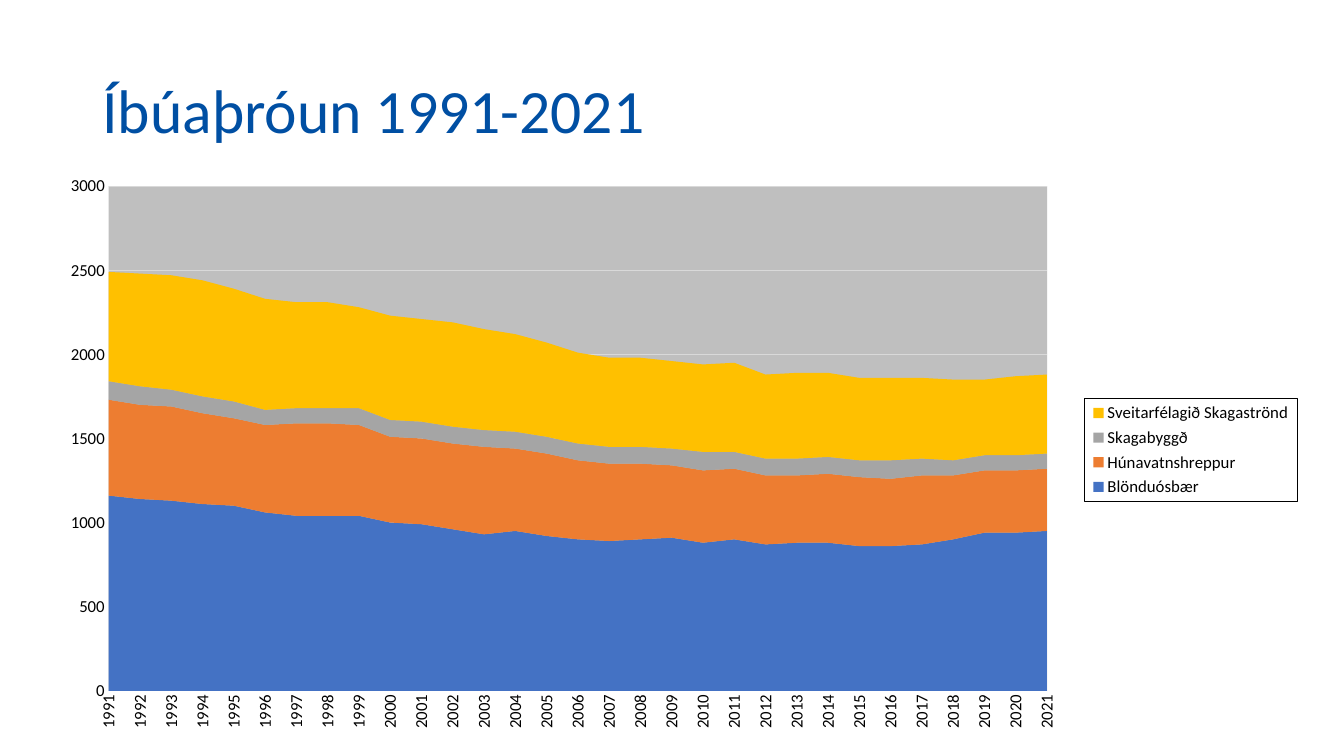
from dataclasses import dataclass

from lxml.etree import SubElement
from pptx import Presentation
from pptx.chart.data import CategoryChartData
from pptx.dml.color import RGBColor
from pptx.enum.chart import XL_CHART_TYPE, XL_LEGEND_POSITION, XL_TICK_MARK
from pptx.enum.text import MSO_ANCHOR, PP_ALIGN
from pptx.oxml import parse_xml
from pptx.oxml.ns import nsdecls, qn
from pptx.util import Pt

FONT = "Calibri"
COLORS = {
    "title": "004FA3",
    "text": "000000",
    "grid": "D9D9D9",
    "plot": "BFBFBF",
    "blue": "4472C4",
    "orange": "ED7D31",
    "gray": "A5A5A5",
    "yellow": "FFC000",
}
YEARS = range(1991, 2022)


@dataclass(frozen=True)
class Municipality:
    name: str
    color: str
    population: tuple[int, ...]


MUNICIPALITIES = (
    Municipality("Blönduósbær", "blue", (
        1160, 1140, 1130, 1110, 1100, 1060, 1040, 1040, 1040, 1000, 990,
        960, 930, 950, 920, 900, 890, 900, 910, 880, 900,
        870, 880, 880, 860, 860, 870, 900, 940, 940, 950)),
    Municipality("Húnavatnshreppur", "orange", (
        570, 560, 560, 540, 520, 520, 550, 550, 540, 510, 510,
        510, 520, 490, 490, 470, 460, 450, 430, 430, 420,
        410, 400, 410, 410, 400, 410, 380, 370, 370, 370)),
    Municipality("Skagabyggð", "gray", (
        110, 110, 100, 100, 100, 90, 90, 90, 100, 100, 100,
        100, 100, 100, 100, 100, 100, 100, 100, 110, 100,
        100, 100, 100, 100, 110, 100, 90, 90, 90, 90)),
    Municipality("Sveitarfélagið Skagaströnd", "yellow", (
        650, 670, 680, 690, 670, 660, 630, 630, 600, 620, 610,
        620, 600, 580, 560, 540, 530, 530, 520, 520, 530,
        500, 510, 500, 490, 490, 480, 480, 450, 470, 470)),
)


def rgb(name: str) -> RGBColor:
    return RGBColor.from_string(COLORS[name])


def set_layout(parent, position: int, box: tuple, inner: bool = False) -> None:
    """Place a chart part by fractions (x, y, w, h) of the chart's size."""
    for old in parent.findall(qn("c:layout")):
        parent.remove(old)
    layout = parent.makeelement(qn("c:layout"))
    parent.insert(position, layout)
    manual = SubElement(layout, qn("c:manualLayout"))
    settings = [("layoutTarget", "inner")] if inner else []
    settings += [("xMode", "edge"), ("yMode", "edge")]
    settings += zip("xywh", map(str, box))
    for tag, value in settings:
        SubElement(manual, qn(f"c:{tag}")).set("val", value)


def add_title(slide) -> None:
    sp = slide.shapes.title
    sp.left, sp.top, sp.width, sp.height = Pt(66), Pt(28.8), Pt(828), Pt(104.4)
    tf = sp.text_frame
    tf.text = "Íbúaþróun 1991-2021"
    tf.vertical_anchor = MSO_ANCHOR.MIDDLE
    p = tf.paragraphs[0]
    p.alignment = PP_ALIGN.LEFT
    p.line_spacing = 0.9
    p.font.name, p.font.size = FONT, Pt(44)
    p.font.color.rgb = rgb("title")


def format_axes(chart) -> None:
    years, people = chart.category_axis, chart.value_axis
    for axis in (years, people):
        axis.major_tick_mark = axis.minor_tick_mark = XL_TICK_MARK.NONE
        axis.tick_labels.font.size = Pt(12)
    people.minimum_scale, people.maximum_scale, people.major_unit = 0, 3000, 500
    people.has_major_gridlines = True
    people.format.line.fill.background()
    for line in (years.format.line, people.major_gridlines.format.line):
        line.color.rgb = rgb("grid")
        line.width = Pt(0.75)
    years._element.find(f"{qn('c:txPr')}/{qn('a:bodyPr')}").set("rot", "-5400000")
    people._element.find(qn("c:crossBetween")).set("val", "midCat")


def format_legend(chart) -> None:
    chart.has_legend = True
    legend = chart.legend
    legend.position = XL_LEGEND_POSITION.RIGHT
    legend.include_in_layout = False
    legend.font.size = Pt(12)
    set_layout(legend._element, 1, (0.83, 0.41, 0.17, 0.18))
    border = parse_xml(
        f'<c:spPr {nsdecls("c", "a")}><a:noFill/><a:ln w="{Pt(0.75)}"><a:solidFill>'
        f'<a:srgbClr val="{COLORS["text"]}"/></a:solidFill></a:ln></c:spPr>')
    legend._element.find(qn("c:txPr")).addprevious(border)


def add_population_chart(slide) -> None:
    data = CategoryChartData()
    data.categories = [str(year) for year in YEARS]
    for town in MUNICIPALITIES:
        data.add_series(town.name, town.population)
    chart = slide.shapes.add_chart(
        XL_CHART_TYPE.AREA_STACKED, Pt(33), Pt(116.6), Pt(894), Pt(409.7), data).chart
    chart.has_title = False
    chart.font.name, chart.font.size = FONT, Pt(12)
    chart.font.color.rgb = rgb("text")
    plot = chart.plots[0]
    plot.vary_by_categories = False
    for series, town in zip(plot.series, MUNICIPALITIES):
        series.format.fill.solid()
        series.format.fill.fore_color.rgb = rgb(town.color)
        series.format.line.fill.background()
    format_axes(chart)
    format_legend(chart)
    plot_area = chart._chartSpace.chart.plotArea
    set_layout(plot_area, 0, (0.05, 0.04, 0.75, 0.88), inner=True)
    plot_area.append(parse_xml(
        f'<c:spPr {nsdecls("c", "a")}><a:solidFill><a:srgbClr val="{COLORS["plot"]}"/>'
        '</a:solidFill><a:ln><a:noFill/></a:ln></c:spPr>'))


def main() -> None:
    prs = Presentation()
    prs.slide_width, prs.slide_height = Pt(960), Pt(540)
    slide = prs.slides.add_slide(prs.slide_layouts.get_by_name("Title Only"))
    add_title(slide)
    add_population_chart(slide)
    prs.save("out.pptx")


if __name__ == "__main__":
    main()
